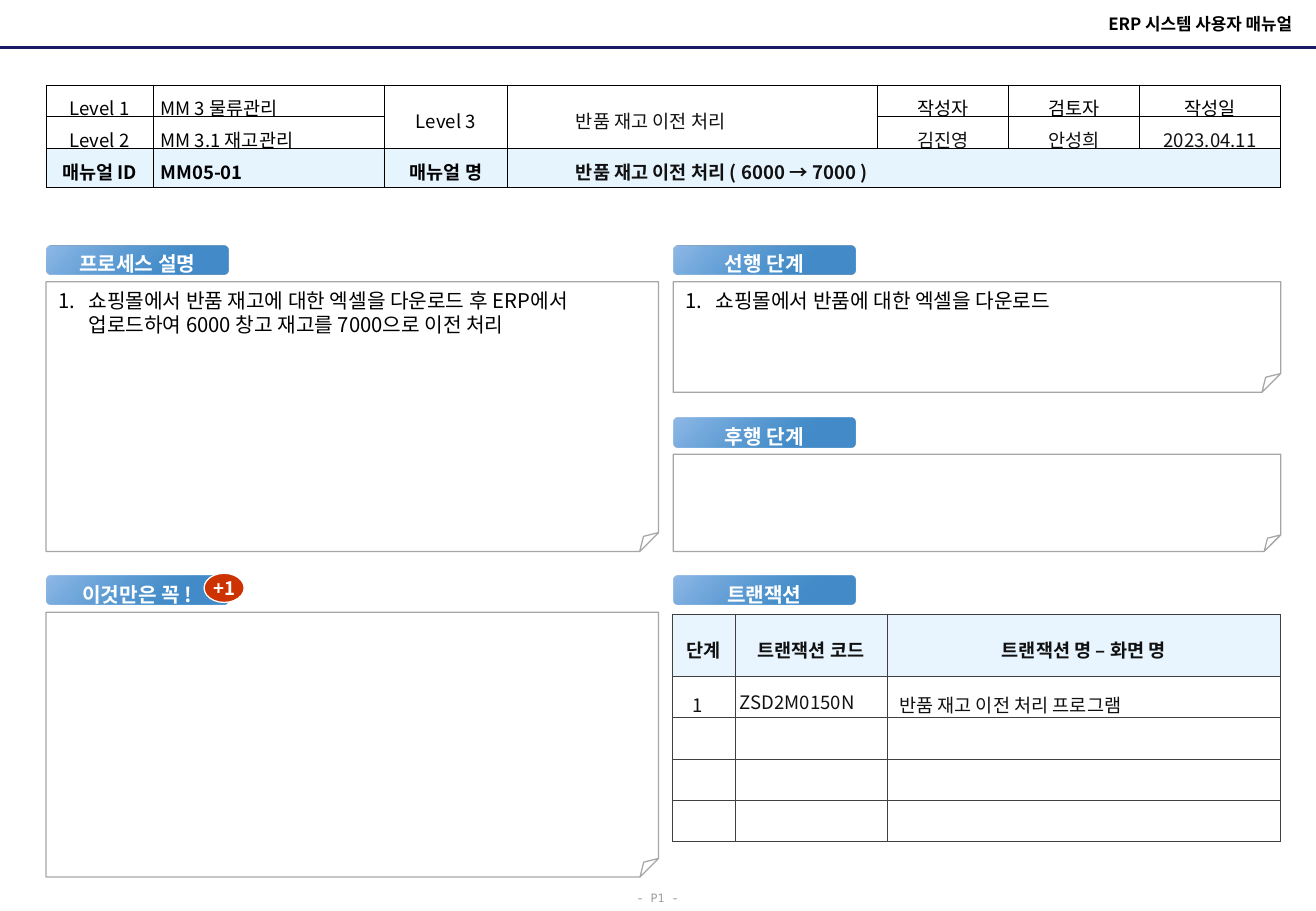
from dataclasses import dataclass
from lxml.etree import SubElement as Sub
from pptx import Presentation
from pptx.dml.color import RGBColor as RGB
from pptx.enum.shapes import MSO_CONNECTOR as Line, MSO_SHAPE as Kind
from pptx.enum.text import MSO_ANCHOR as Anchor, PP_ALIGN as Align
from pptx.oxml.ns import qn
from pptx.util import Inches, Pt


@dataclass(frozen=True)
class Theme:
    """Hold the colours, fonts and type sizes."""
    font: str = "Noto Sans CJK KR"
    mono: str = "Noto Sans Mono"
    black: str = "000000"
    ink: str = "111111"
    white: str = "FFFFFF"
    gray: str = "969696"
    edge: str = "A6A6A6"
    grid: str = "404040"
    navy: str = "191966"
    red: str = "CC3300"
    sky: str = "93D1FB"
    fade: tuple = ((0, "C6D9F1", 100), (0, "90BAE8", 100), (70, "1973BD", 82))
    tiny: int = 7
    small: int = 10
    cell: int = 11
    body: int = 12


T = Theme()
WIDE, HIGH = 108.3, 75
LEFT, RIGHT = 3.8, 55.4
BASIC = (1, 0.5, 1, 0.5)
TIGHT = (0.6, 0.1, 0.6, 0.1)
BARE = (0, 0, 0, 0)


def unit(n):
    """Turn grid units, ten to the inch, into a length."""
    return Inches(n / 10)


def place(*box):
    """Turn a box in grid units into lengths."""
    return [unit(n) for n in box]


def say(para, text, size=T.cell, color=T.black, bold=False, align=Align.LEFT,
        space=None, indent=0, hang=0, count=False, face=T.font):
    """Write one paragraph in one style."""
    para.text = text
    para.alignment = align
    para.line_spacing = space
    props = para._p.get_or_add_pPr()
    props.set("marL", str(unit(indent)))
    props.set("indent", str(unit(-hang)))
    if count:
        Sub(props, qn("a:buFont"), typeface="+mj-lt")
        Sub(props, qn("a:buAutoNum"), type="arabicPeriod")
    font = para.font
    font.size, font.bold, font.name = Pt(size), bold, face
    font.color.rgb = RGB.from_string(color)
    Sub(props.find(qn("a:defRPr")), qn("a:ea"), typeface=face)
    if not text:
        Sub(para._p, qn("a:endParaRPr"), sz=str(size * 100))


def inset(item, gaps):
    """Set the four margins of a frame or cell."""
    (item.margin_left, item.margin_top,
     item.margin_right, item.margin_bottom) = place(*gaps)


def shape(slide, kind, box, line=None, fill=None):
    """Add a flat shape with an optional line and fill."""
    item = slide.shapes.add_shape(kind, *place(*box))
    item.shadow.inherit = False
    if fill:
        item.fill.solid()
        item.fill.fore_color.rgb = RGB.from_string(fill)
    else:
        item.fill.background()
    if line:
        item.line.color.rgb = RGB.from_string(line)
        item.line.width = Pt(0.75)
    else:
        item.line.fill.background()
    return item


def label(slide, col, row, text):
    """Add a section label with a blue fade."""
    item = shape(slide, Kind.ROUNDED_RECTANGLE, (col, row, 15, 2.4))
    item.fill.gradient()
    fade = item._element.spPr.find(qn("a:gradFill"))
    for child in list(fade):
        fade.remove(child)
    stops = Sub(fade, qn("a:gsLst"))
    for pos, color, alpha in T.fade:
        stop = Sub(stops, qn("a:gs"), pos=str(pos * 1000))
        tint = Sub(stop, qn("a:srgbClr"), val=color)
        Sub(tint, qn("a:alpha"), val=str(alpha * 1000))
    Sub(fade, qn("a:lin"), ang="2700000", scaled="0")
    frame = item.text_frame
    frame.word_wrap, frame.vertical_anchor = True, Anchor.MIDDLE
    inset(frame, (0, 0, 0, 0.4))
    say(frame.paragraphs[0], text, T.body, T.white, True, Align.CENTER,
        1.5, 1, 1)


def note(slide, box, fold, text=""):
    """Add a folded note with a numbered item."""
    item = shape(slide, Kind.FOLDED_CORNER, box, T.edge)
    geom = item._element.spPr.find(qn("a:prstGeom"))
    Sub(geom.find(qn("a:avLst")), qn("a:gd"), name="adj",
        fmla=f"val {round(fold * 100000)}")
    if text:
        frame = item.text_frame
        frame.word_wrap, frame.vertical_anchor = True, Anchor.TOP
        say(frame.paragraphs[0], text, T.body, indent=2.5, hang=2.5,
            count=True)


def badge(slide, box, text):
    """Add a small round badge."""
    frame = shape(slide, Kind.OVAL, box, T.white, T.red).text_frame
    frame.word_wrap, frame.vertical_anchor = False, Anchor.MIDDLE
    say(frame.paragraphs[0], text, T.cell, T.white, True, Align.CENTER)


def words(slide, box, text, wrap=True, **style):
    """Add a text box of one line."""
    frame = slide.shapes.add_textbox(*place(*box)).text_frame
    frame.word_wrap = wrap
    frame.vertical_anchor = Anchor.MIDDLE if wrap else Anchor.TOP
    say(frame.paragraphs[0], text, **style)


def rule(slide, row):
    """Draw the line under the page head."""
    item = slide.shapes.add_connector(Line.STRAIGHT,
                                      *place(0, row, WIDE, row))
    item.line.color.rgb = RGB.from_string(T.navy)
    item.line.width = Pt(1.5)
    Sub(item._element.spPr, qn("a:effectLst"))


def paint(cell, fill, alpha, edge):
    """Fill a cell and draw its four borders."""
    props = cell._tc.get_or_add_tcPr()
    if fill:
        cell.fill.solid()
        cell.fill.fore_color.rgb = RGB.from_string(fill)
        tint = props.find(qn("a:solidFill")).find(qn("a:srgbClr"))
        Sub(tint, qn("a:alpha"), val=str(alpha * 1000))
    else:
        cell.fill.background()
    for spot, side in enumerate(("lnL", "lnR", "lnT", "lnB")):
        line = Sub(props, qn("a:" + side), w=str(Pt(0.5)))
        Sub(Sub(line, qn("a:solidFill")), qn("a:srgbClr"), val=edge)
        props.insert(spot, line)


def table(slide, at, cols, rows, data, edge, look):
    """Add a table whose cells are styled by the look function."""
    box = place(*at, sum(cols), sum(rows))
    grid = slide.shapes.add_table(len(rows), len(cols), *box).table
    grid.first_row = grid.horz_banding = False
    for col, size in zip(grid.columns, cols):
        col.width = unit(size)
    for row, size in zip(grid.rows, rows):
        row.height = unit(size)
    for r, line in enumerate(data):
        for c, text in enumerate(line):
            cell = grid.cell(r, c)
            fill, alpha, gaps, style = look(r, c)
            paint(cell, fill, alpha, edge)
            cell.vertical_anchor = Anchor.MIDDLE
            inset(cell, gaps)
            say(cell.text_frame.paragraphs[0], text, space=1.3, **style)
    return grid


def headlook(r, c):
    """Style a cell of the manual table."""
    last = r == 2
    style = dict(bold=last, indent=5 if c == 3 else 0,
                 align=Align.LEFT if c in (1, 3) else Align.CENTER,
                 color=T.ink if c == 3 or (r == 1 and c > 3) else T.black)
    return T.sky if last else T.white, 23 if last else 100, TIGHT, style


def steplook(r, c):
    """Style a cell of the transaction table."""
    if r == 0:
        return T.sky, 20, BASIC, dict(color=T.ink, bold=True,
                                      align=Align.CENTER)
    gaps = BARE if c == 1 else BASIC
    return None, 100, gaps, dict(color=T.ink, indent=(0.7, 0.4, 0)[c])


def main():
    """Build the manual cover slide."""
    deck = Presentation()
    deck.slide_width, deck.slide_height = place(WIDE, HIGH)
    slide = deck.slides.add_slide(deck.slide_layouts[6])
    words(slide, (51.4, 72.5, 5.6, 2.5), "- P1 -", False, size=T.tiny,
          color=T.gray, space=1.3, face=T.mono)
    rule(slide, 3.9)
    words(slide, (60.4, 0.6, 46.9, 2.7), "ERP 시스템 사용자 매뉴얼",
          size=T.small, bold=True, align=Align.RIGHT)
    head = table(slide, (LEFT, 7), (8.8, 19, 10.2, 30.4, 10.8, 10.8, 11.6), (2.6, 2.6, 3.2), (
        ("Level 1", "MM 3 물류관리", "Level 3", "반품 재고 이전 처리", "작성자", "검토자", "작성일"),
        ("Level 2", "MM 3.1 재고관리", "", "", "김진영", "안성희", "2023.04.11"),
        ("매뉴얼 ID", "MM05-01", "매뉴얼 명", "반품 재고 이전 처리 ( 6000 → 7000 )", "", "", "")),
        T.black, headlook)
    for top, end in (((0, 2), (1, 2)), ((0, 3), (1, 3)), ((2, 3), (2, 6))):
        head.cell(*top).merge(head.cell(*end))
    for col, row, text in ((LEFT, 20.2, "프로세스 설명"), (RIGHT, 20.2, "선행 단계"),
                           (RIGHT, 34.4, "후행 단계"), (LEFT, 47.4, "이것만은 꼭 !"),
                           (RIGHT, 47.4, "트랜잭션")):
        label(slide, col, row, text)
    badge(slide, (16.8, 47.2, 3.3, 2.4), "+1")
    note(slide, (LEFT, 23.2, 50.4, 22.2), 0.07,
         "쇼핑몰에서 반품 재고에 대한 엑셀을 다운로드 후 ERP에서 "
         "업로드하여 6000 창고 재고를 7000으로 이전 처리")
    note(slide, (RIGHT, 23.2, 50, 9.1), 0.17, "쇼핑몰에서 반품에 대한 엑셀을 다운로드")
    note(slide, (RIGHT, 37.4, 50, 8), 0.17)
    note(slide, (LEFT, 50.4, 50.4, 21.8), 0.07)
    table(slide, (55.3, 50.6), (5.2, 12.5, 32.4), (5.1, *[3.4] * 4), (
        ("단계", "트랜잭션 코드", "트랜잭션 명 – 화면 명"),
        ("1", "ZSD2M0150N", "반품 재고 이전 처리 프로그램"),
        *[("", "", "")] * 3), T.grid, steplook)
    deck.save("out.pptx")


if __name__ == "__main__":
    main()
